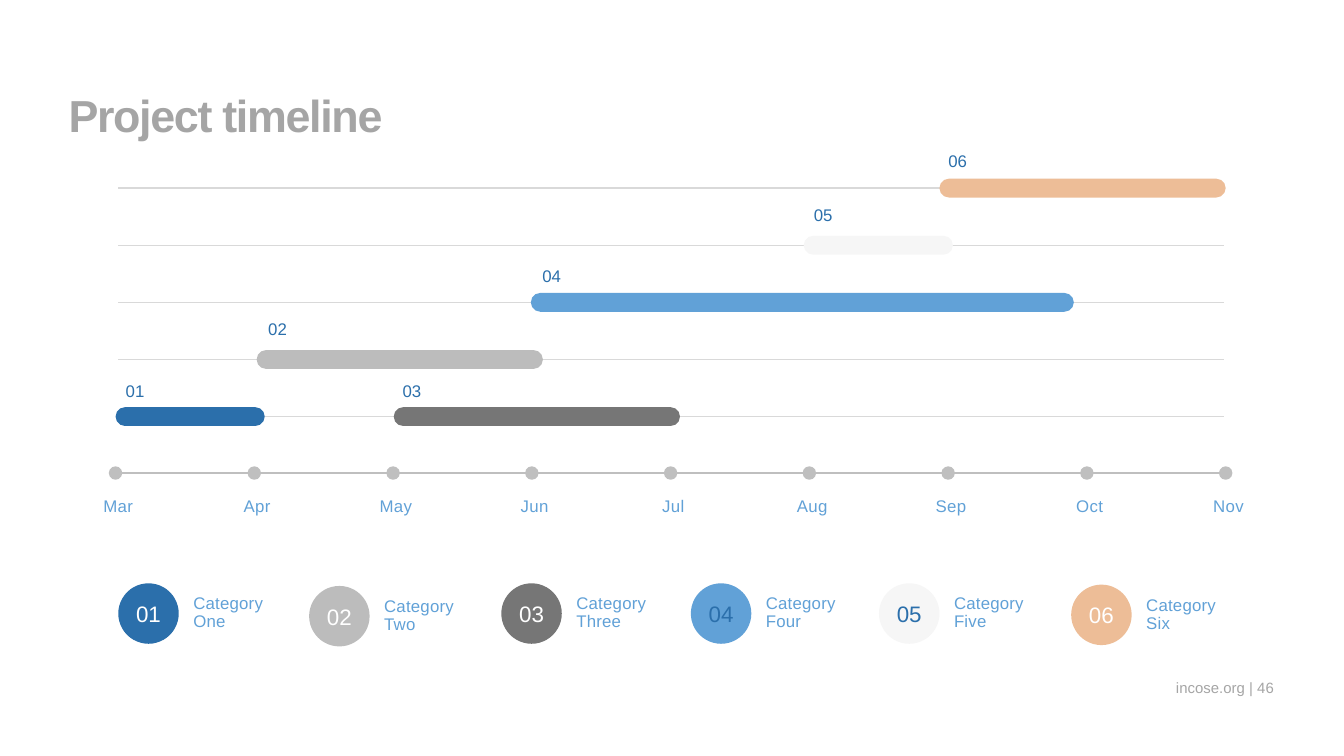
from lxml import etree
from pptx import Presentation
from pptx.dml.color import RGBColor
from pptx.enum.shapes import MSO_CONNECTOR, MSO_SHAPE
from pptx.enum.text import MSO_ANCHOR, PP_ALIGN
from pptx.oxml.ns import qn
from pptx.util import Inches, Pt

FONT = "Arial"
WHITE = RGBColor(0xFF, 0xFF, 0xFF)
TEXT_GRAY = RGBColor(0xA5, 0xA5, 0xA5)
AXIS_GRAY = RGBColor(0xBF, 0xBF, 0xBF)
GRID_GRAY = RGBColor(0xD9, 0xD9, 0xD9)
NAVY = RGBColor(0x2B, 0x6F, 0xAB)
SKY = RGBColor(0x61, 0xA1, 0xD7)
SILVER = RGBColor(0xBC, 0xBC, 0xBC)
SLATE = RGBColor(0x76, 0x76, 0x76)
PALE = RGBColor(0xF6, 0xF6, 0xF6)
PEACH = RGBColor(0xED, 0xBD, 0x97)

MONTHS = ["Mar", "Apr", "May", "Jun", "Jul", "Aug", "Sep", "Oct", "Nov"]

TASKS = [
    ("01", 4, 0.00, 1.11, -0.08, 1.28, NAVY),
    ("02", 3, 1.05, 2.13, 0.98, 0.82, SILVER),
    ("03", 4, 2.07, 2.13, 1.98, 1.28, SLATE),
    ("04", 2, 3.09, 4.04, 3.02, 0.43, SKY),
    ("05", 1, 5.12, 1.11, 5.04, -0.03, PALE),
    ("06", 0, 6.13, 2.13, 6.04, -0.43, PEACH),
]

CATEGORIES = [
    ("01", "One", 0.00, 0.00, NAVY, WHITE),
    ("02", "Two", 1.42, 0.02, SILVER, WHITE),
    ("03", "Three", 2.85, 0.00, SLATE, WHITE),
    ("04", "Four", 4.26, 0.00, SKY, NAVY),
    ("05", "Five", 5.66, 0.00, PALE, NAVY),
    ("06", "Six", 7.09, 0.01, PEACH, WHITE),
]


def write_text(shape, lines, size, color, align=PP_ALIGN.LEFT, anchor=MSO_ANCHOR.TOP,
               insets=(0, 0), line_spacing=None, tracking=0, bold=False):
    """Fill a shape with one paragraph, its lines parted by line breaks."""
    frame = shape.text_frame
    frame.word_wrap = True
    frame.vertical_anchor = anchor
    frame.margin_left = frame.margin_right = Inches(insets[0])
    frame.margin_top = frame.margin_bottom = Inches(insets[1])
    paragraph = frame.paragraphs[0]
    paragraph.alignment = align
    if line_spacing:
        paragraph.line_spacing = line_spacing
    for index, line in enumerate(lines):
        if index:
            paragraph.add_line_break()
        run = paragraph.add_run()
        run.text = line
        run.font.name = FONT
        run.font.size = Pt(size)
        run.font.bold = bold
        run.font.color.rgb = color
        if tracking:
            run.font._element.set("spc", str(round(tracking * 100)))


def add_text(slide, left, top, width, height, lines, size, color, **style):
    """Add a text box."""
    box = slide.shapes.add_textbox(Inches(left), Inches(top), Inches(width), Inches(height))
    write_text(box, lines, size, color, **style)


def add_filled(slide, kind, left, top, width, height, color):
    """Add a plain filled shape without outline or shadow."""
    shape = slide.shapes.add_shape(kind, Inches(left), Inches(top), Inches(width), Inches(height))
    shape.shadow.inherit = False
    shape.fill.solid()
    shape.fill.fore_color.rgb = color
    shape.line.fill.background()
    return shape


def add_rule(slide, left, top, width, color, weight):
    """Add a horizontal line."""
    line = slide.shapes.add_connector(MSO_CONNECTOR.STRAIGHT, Inches(left), Inches(top),
                                      Inches(left + width), Inches(top))
    line.line.color.rgb = color
    line.line.width = Pt(weight)
    etree.SubElement(line._element.spPr, qn("a:effectLst"))


def add_task_rows(slide, left, top, width, height):
    """Draw the grid lines, task bars and task numbers."""
    rows, bar_height, label_size = 5, 0.14, 0.45
    step = height / (rows - 1)
    for row in range(rows):
        add_rule(slide, left + 0.02, top + row * step, width - 0.03, GRID_GRAY, 0.75)
    for number, row, bar_left, bar_width, label_left, label_top, color in TASKS:
        bar = add_filled(slide, MSO_SHAPE.ROUNDED_RECTANGLE, left + bar_left,
                         top + row * step - bar_height / 2, bar_width, bar_height, color)
        bar.adjustments[0] = 0.5
        add_text(slide, left + label_left, top + label_top, label_size, label_size, [number],
                 9, NAVY, align=PP_ALIGN.CENTER, anchor=MSO_ANCHOR.MIDDLE)


def add_month_axis(slide, left, top, width):
    """Draw the month axis with evenly spaced dots and names."""
    dot, label_width = 0.1, 0.54
    add_rule(slide, left + 0.02, top, width - 0.03, AXIS_GRAY, 1)
    for index, month in enumerate(MONTHS):
        center = left + index * width / (len(MONTHS) - 1)
        add_filled(slide, MSO_SHAPE.OVAL, center - dot / 2, top - dot / 2, dot, dot, AXIS_GRAY)
        add_text(slide, center + 0.02 - label_width / 2, top + 0.14, label_width, 0.24, [month],
                 9, SKY, align=PP_ALIGN.CENTER, insets=(0.1, 0.05), line_spacing=0.9,
                 tracking=0.2)


def add_legend(slide, left, top):
    """Draw the numbered circles with their category names."""
    size = 0.45
    for number, name, offset, drop, fill, color in CATEGORIES:
        x, y = left + offset, top + drop
        circle = add_filled(slide, MSO_SHAPE.OVAL, x, y, size, size, fill)
        write_text(circle, [number], 12, color, align=PP_ALIGN.CENTER, anchor=MSO_ANCHOR.MIDDLE)
        add_text(slide, x + size + 0.01, y + 0.04, 0.82, 0.37, ["Category", name], 9, SKY,
                 insets=(0.1, 0.05), line_spacing=0.9, tracking=0.1)


def build_timeline_slide(presentation):
    """Build the project timeline slide."""
    slide = presentation.slides.add_slide(presentation.slide_layouts[6])
    add_text(slide, 8.38, 4.99, 1.1, 0.19, ["incose.org | 46"], 8, TEXT_GRAY,
             align=PP_ALIGN.RIGHT, anchor=MSO_ANCHOR.BOTTOM, line_spacing=1.5)
    add_text(slide, 0.51, 0.65, 8.99, 0.4, ["Project timeline"], 24, TEXT_GRAY,
             tracking=-0.7, bold=True)
    add_task_rows(slide, 0.86, 1.4, 8.26, 1.7)
    add_month_axis(slide, 0.86, 3.52, 8.26)
    add_legend(slide, 0.88, 4.34)


def main():
    """Create and save the presentation."""
    presentation = Presentation()
    presentation.slide_width = Inches(10)
    presentation.slide_height = Inches(10 * 9 / 16)
    build_timeline_slide(presentation)
    presentation.save("out.pptx")


if __name__ == "__main__":
    main()
